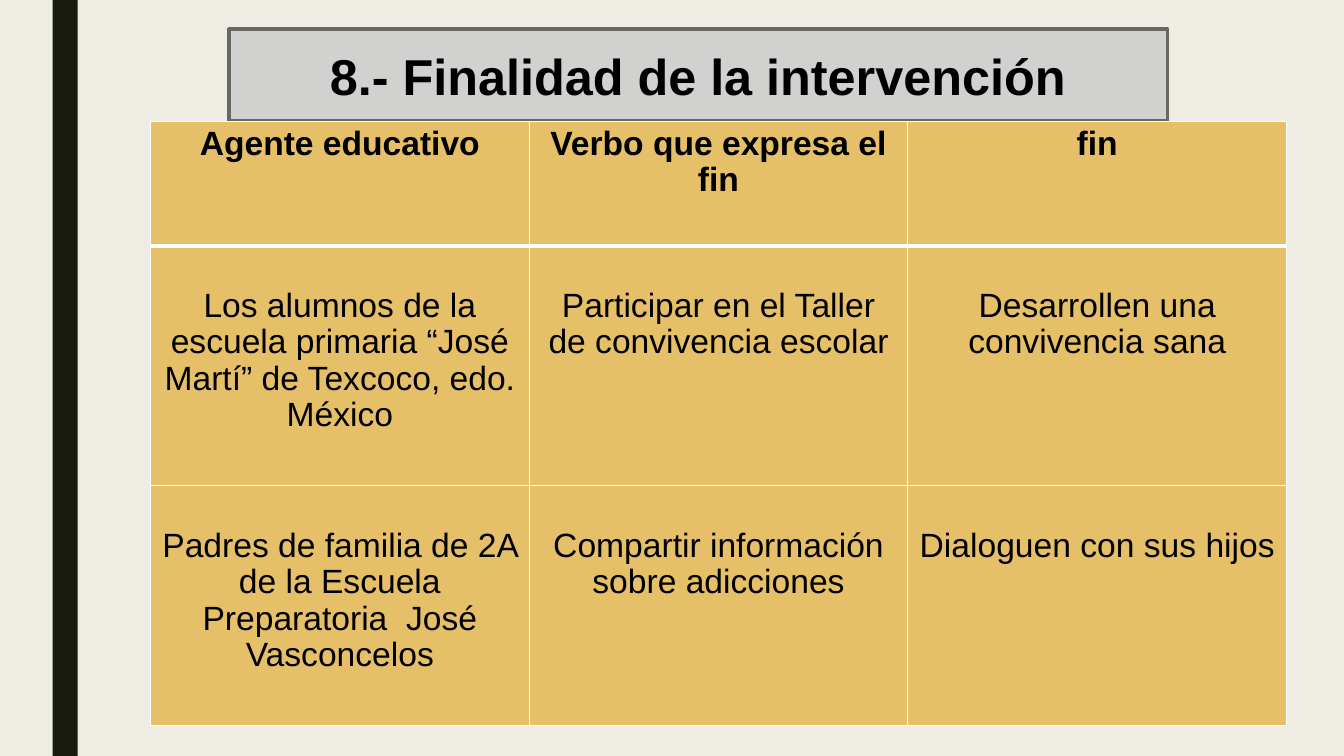
from pptx import Presentation
from pptx.dml.color import RGBColor
from pptx.enum.shapes import MSO_SHAPE
from pptx.enum.text import MSO_ANCHOR, PP_ALIGN
from pptx.util import Pt
from lxml.etree import SubElement
from pptx.oxml.ns import qn

TITLE = "8.- Finalidad de la intervención"
ROWS = [
    ("Agente educativo", "Verbo que expresa el fin", "fin"),
    ("Los alumnos de la escuela primaria “José Martí” de Texcoco, edo. México",
     "Participar en el Taller de convivencia escolar",
     "Desarrollen una convivencia sana"),
    ("Padres de familia de 2A de la Escuela Preparatoria  José Vasconcelos",
     "Compartir información sobre adicciones",
     "Dialoguen con sus hijos"),
]
THEME = dict(
    font="Arial", title_size=36, cell_size=24,
    background="EFEDE3", band="191B0E", title_fill="D1D1CF",
    title_line="686863", cell="E6C069", border="FFFFFF", text="000000",
)
SLIDE_W, SLIDE_H = 960, 540
BAND = (37.5, 0, 18, SLIDE_H)
TITLE_BOX = (163.5, 21, 670.5, 65.5)
TABLE_LEFT, TABLE_TOP, COLUMN_W = 107.5, 86.5, 270.5
ROW_HEIGHTS = (89, 171.5, 171.5)
HEADER_INSET, BODY_INSET = 3.6, 30.4
THIN, THICK = 1, 3


def color(name):
    return RGBColor.from_string(THEME[name])


def write(tf, text, size, bold=False, spacing=1.0):
    p = tf.paragraphs[0]
    p.alignment = PP_ALIGN.CENTER
    p.line_spacing = spacing
    r = p.add_run()
    r.text = text
    r.font.name, r.font.size, r.font.bold = THEME["font"], Pt(size), bold
    r.font.color.rgb = color("text")


def add_box(s, box, fill, line=None):
    sp = s.shapes.add_shape(MSO_SHAPE.RECTANGLE, *map(Pt, box))
    sp.shadow.inherit = False
    sp.fill.solid()
    sp.fill.fore_color.rgb = color(fill)
    if line:
        sp.line.color.rgb = color(line)
        sp.line.width = Pt(2.75)
    else:
        sp.line.fill.background()
    return sp


def set_borders(cell, top, bottom):
    """Draw four solid borders; call before the fill, which must follow them."""
    tcPr = cell._tc.get_or_add_tcPr()
    for side, width in (("L", THIN), ("R", THIN), ("T", top), ("B", bottom)):
        ln = SubElement(tcPr, qn(f"a:ln{side}"), w=str(Pt(width)))
        fill = SubElement(ln, qn("a:solidFill"))
        SubElement(fill, qn("a:srgbClr"), val=THEME["border"])


def add_purpose_table(s):
    columns = len(ROWS[0])
    frame = s.shapes.add_table(
        len(ROWS), columns, Pt(TABLE_LEFT), Pt(TABLE_TOP),
        Pt(COLUMN_W * columns), Pt(sum(ROW_HEIGHTS)))
    table = frame.table
    for column in table.columns:
        column.width = Pt(COLUMN_W)
    for i, (texts, height) in enumerate(zip(ROWS, ROW_HEIGHTS)):
        table.rows[i].height = Pt(height)
        header = i == 0
        for j, text in enumerate(texts):
            cell = table.cell(i, j)
            set_borders(cell, THICK if i == 1 else THIN, THICK if header else THIN)
            cell.fill.solid()
            cell.fill.fore_color.rgb = color("cell")
            cell.margin_top = Pt(HEADER_INSET if header else BODY_INSET)
            write(cell.text_frame, text, THEME["cell_size"], bold=header, spacing=0.97)


def main():
    prs = Presentation()
    prs.slide_width, prs.slide_height = Pt(SLIDE_W), Pt(SLIDE_H)
    s = prs.slides.add_slide(prs.slide_layouts[6])
    s.background.fill.solid()
    s.background.fill.fore_color.rgb = color("background")
    add_box(s, BAND, "band")
    title = add_box(s, TITLE_BOX, "title_fill", "title_line")
    title.text_frame.word_wrap = True
    title.text_frame.vertical_anchor = MSO_ANCHOR.MIDDLE
    write(title.text_frame, TITLE, THEME["title_size"], bold=True)
    add_purpose_table(s)
    prs.save("out.pptx")


if __name__ == "__main__":
    main()
